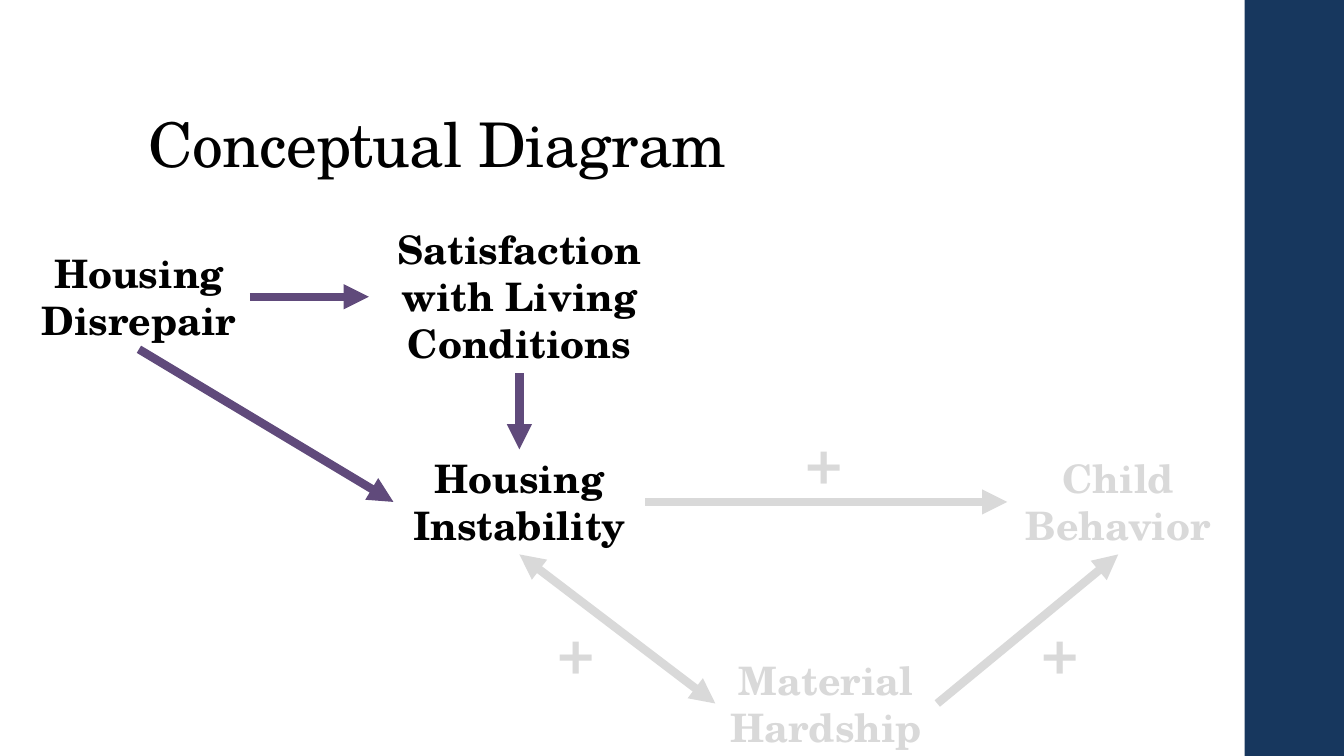
from pptx import Presentation
from pptx.dml.color import RGBColor
from pptx.enum.shapes import MSO_CONNECTOR as Connector, MSO_SHAPE as Shape
from pptx.enum.text import MSO_ANCHOR as Anchor, PP_ALIGN as Align
from pptx.oxml.ns import qn
from pptx.util import Pt
from lxml.etree import SubElement

FONT = "TeX Gyre Schola"
BLACK, GREY, PURPLE, NAVY = "000000", "D9D9D9", "604A7B", "17375E"
WIDTH, HEIGHT, BAND = 960, 540, 72
TOP, LEFT, BOTTOM, RIGHT = range(4)

CONCEPTS = {
    "Housing Disrepair": (20, 174.5, 158.5, 75, BLACK),
    "Satisfaction with Living Conditions": (263.5, 157.5, 215, 109, BLACK),
    "Housing Instability": (281, 321, 180, 75, BLACK),
    "Material Hardship": (511, 465, 158.5, 75, GREY),
    "Child Behavior": (719.5, 321, 158.5, 75, GREY),
}
ARROWS = [
    ("Housing Disrepair", RIGHT, "Satisfaction with Living Conditions", LEFT, PURPLE, False),
    ("Satisfaction with Living Conditions", BOTTOM, "Housing Instability", TOP, PURPLE, False),
    ("Housing Disrepair", BOTTOM, "Housing Instability", LEFT, PURPLE, False),
    ("Housing Instability", RIGHT, "Child Behavior", LEFT, GREY, False),
    ("Material Hardship", RIGHT, "Child Behavior", BOTTOM, GREY, False),
    ("Housing Instability", BOTTOM, "Material Hardship", LEFT, GREY, True),
]
PLUS_SIGNS = [(391, 433.5), (568, 298), (737, 433.5)]


def color(value):
    return RGBColor.from_string(value)


def add_text(page, text, frame, size, ink, bold=True, align=Align.LEFT):
    box = page.shapes.add_textbox(*map(Pt, frame))
    box.text_frame.word_wrap = True
    para = box.text_frame.paragraphs[0]
    para.alignment = align
    span = para.add_run()
    span.text = text
    span.font.name, span.font.size, span.font.bold = FONT, Pt(size), bold
    span.font.color.rgb = color(ink)
    return box


def add_title(page):
    box = add_text(page, "Conceptual Diagram", (99, 29, 763, 104), 44, BLACK, False)
    box.text_frame.vertical_anchor = Anchor.BOTTOM
    para = box.text_frame.paragraphs[0]
    para.line_spacing = 0.9
    para.runs[0].font._element.set("spc", "-50")


def add_band(page):
    band = page.shapes.add_shape(Shape.RECTANGLE, Pt(WIDTH - BAND + 1), 0, Pt(BAND - 1), Pt(HEIGHT))
    band.shadow.inherit = False
    band.fill.solid()
    band.fill.fore_color.rgb = color(NAVY)
    band.line.fill.background()


def add_arrow(page, start, start_side, end, end_side, ink, both_ways):
    arrow = page.shapes.add_connector(Connector.STRAIGHT, 0, 0, 0, 0)
    arrow.begin_connect(start, start_side)
    arrow.end_connect(end, end_side)
    arrow.line.color.rgb = color(ink)
    arrow.line.width = Pt(6)
    line = arrow.line._get_or_add_ln()
    for tip in ["headEnd", "tailEnd"] if both_ways else ["tailEnd"]:
        SubElement(line, qn("a:" + tip), type="triangle")
    SubElement(arrow._element.spPr, qn("a:effectLst"))


def main():
    deck = Presentation()
    deck.slide_width, deck.slide_height = Pt(WIDTH), Pt(HEIGHT)
    page = deck.slides.add_slide(deck.slide_layouts[6])
    add_band(page)
    add_title(page)
    boxes = {
        label: add_text(page, label, frame, 28, ink, align=Align.CENTER)
        for label, (*frame, ink) in CONCEPTS.items()
    }
    for start, start_side, end, end_side, ink, both_ways in ARROWS:
        add_arrow(page, boxes[start], start_side, boxes[end], end_side, ink, both_ways)
    for left, top in PLUS_SIGNS:
        add_text(page, "+", (left, top, 67, 60.5), 44, GREY)
    deck.save("out.pptx")


if __name__ == "__main__":
    main()
